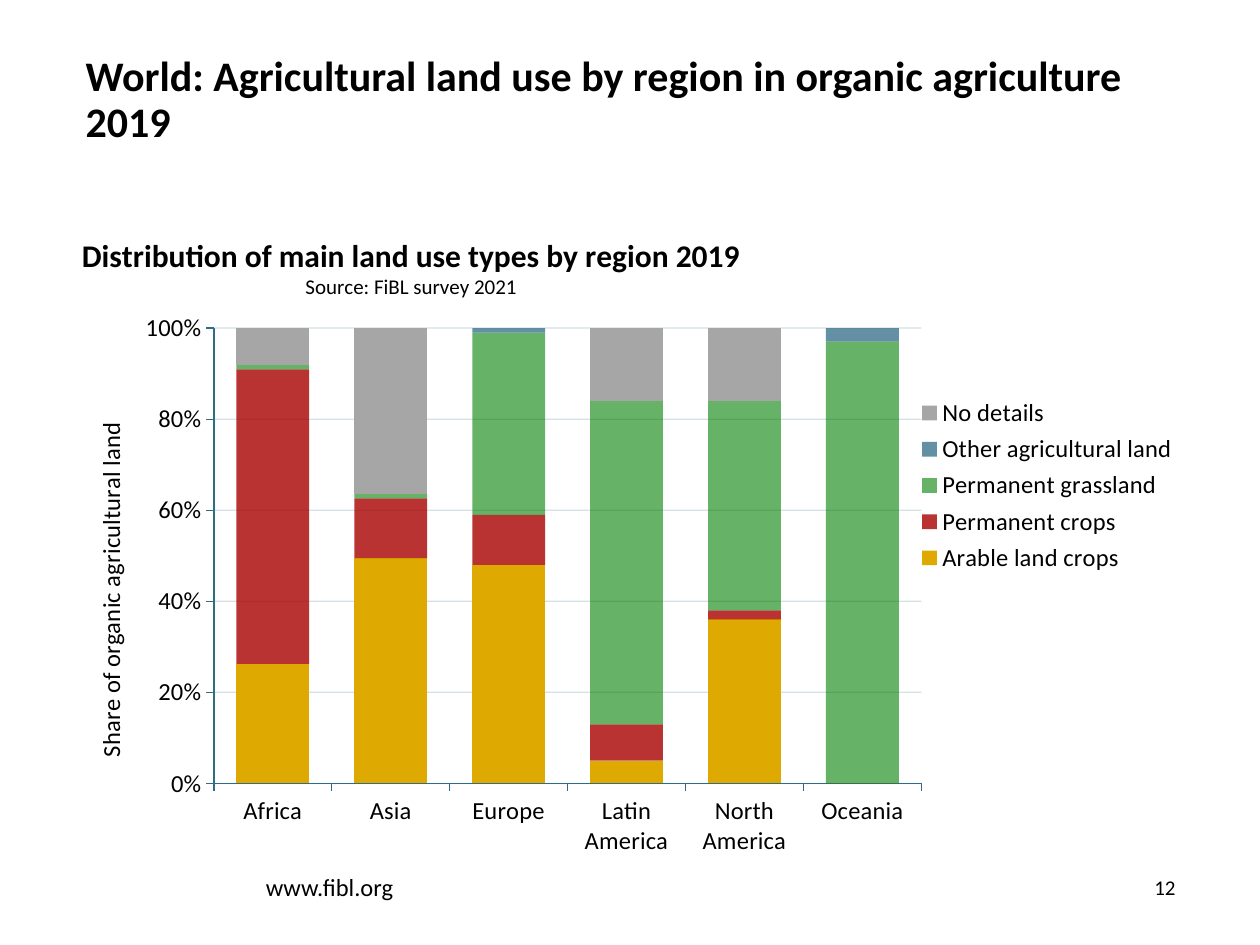
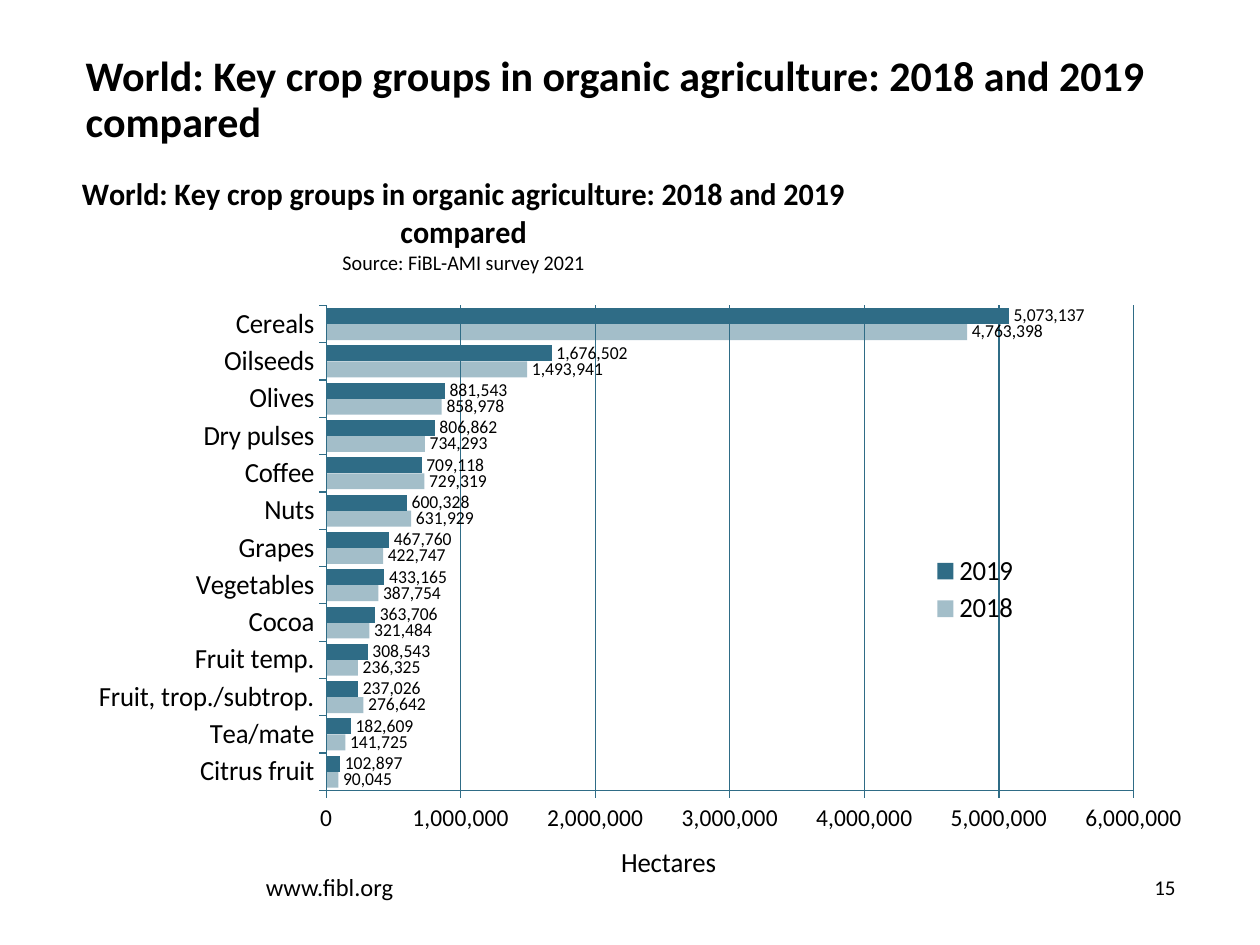
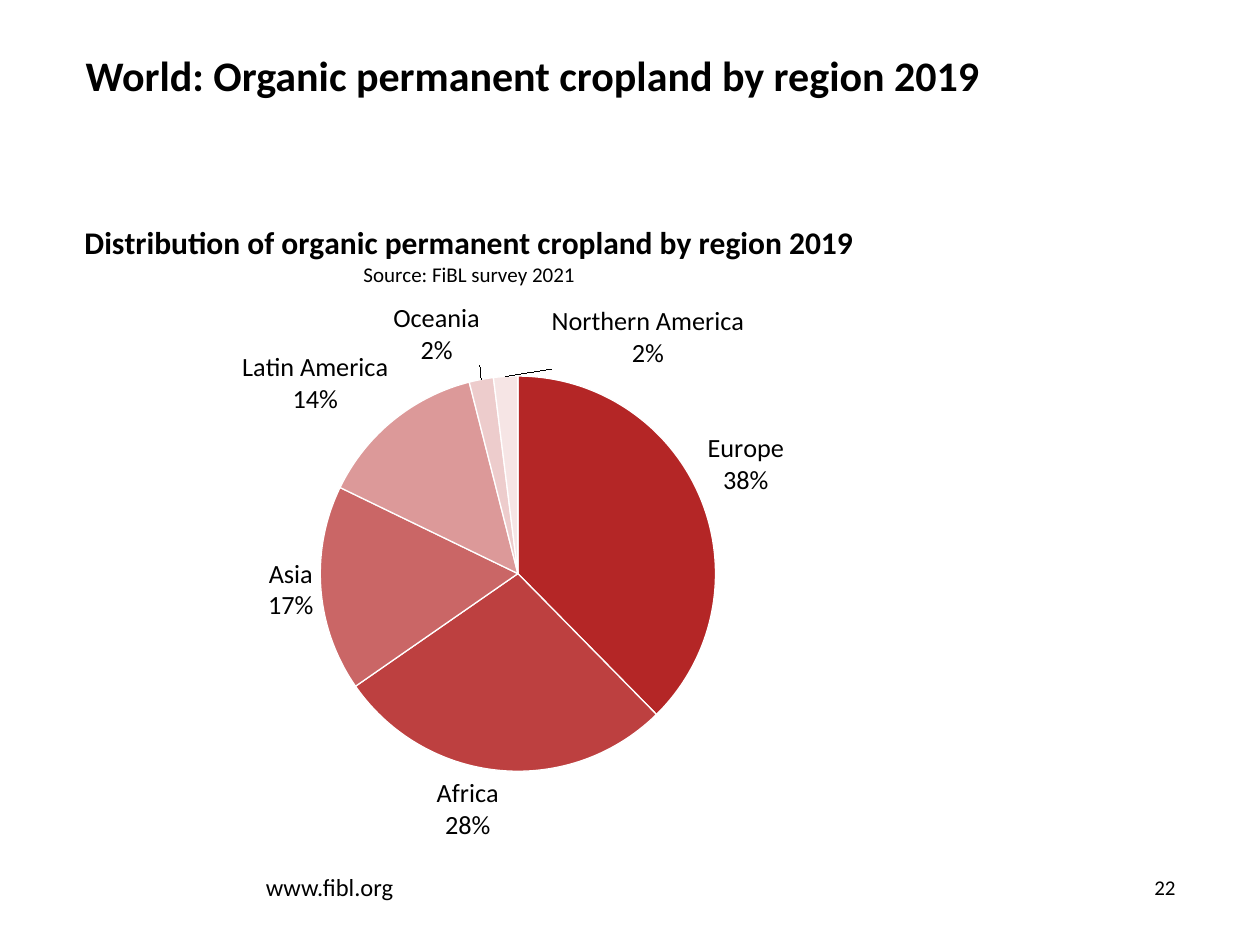
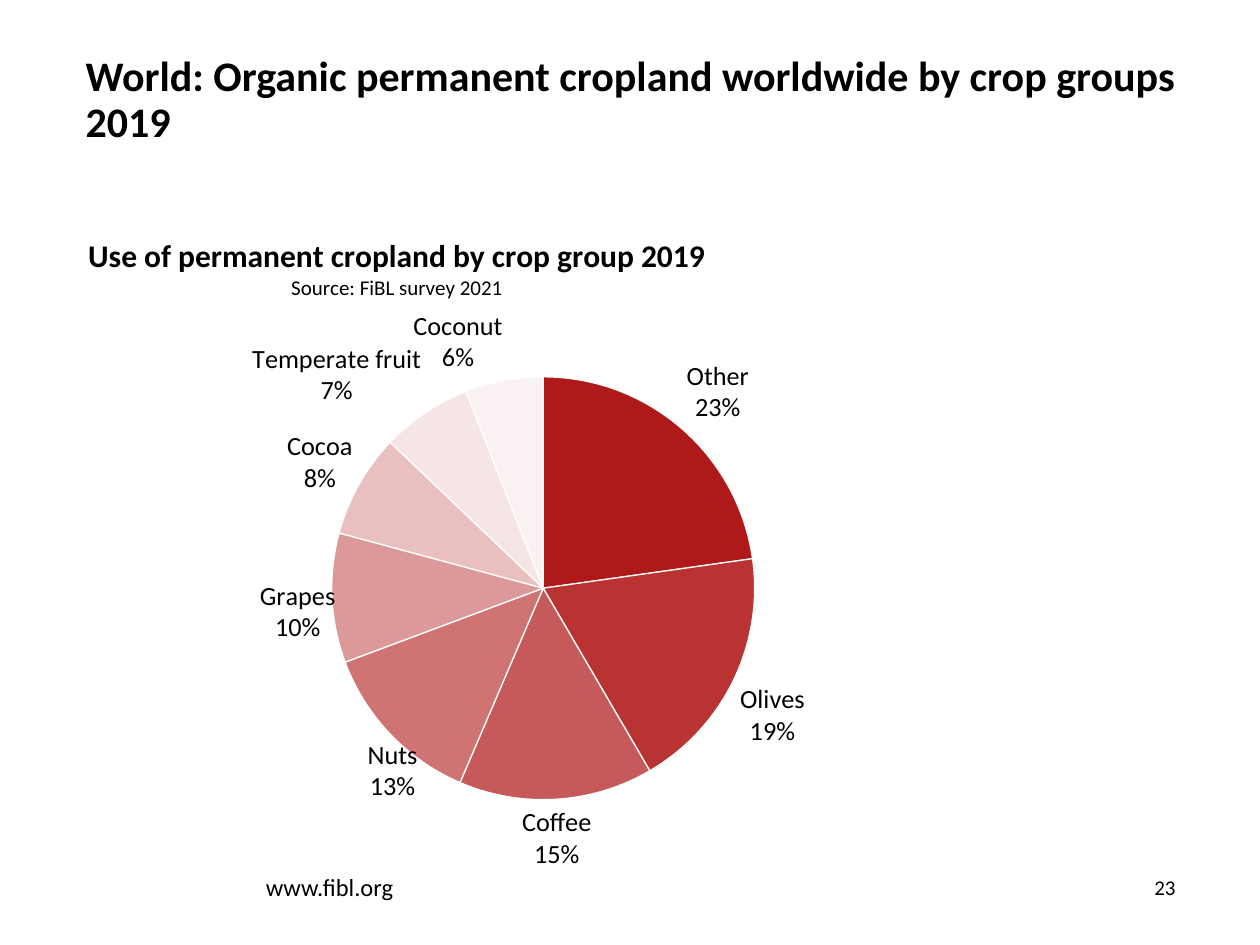
from copy import deepcopy

from lxml import etree
from pptx import Presentation
from pptx.chart.data import CategoryChartData
from pptx.dml.color import RGBColor
from pptx.enum.chart import XL_CHART_TYPE as ChartType
from pptx.enum.chart import XL_LABEL_POSITION as LabelPosition
from pptx.enum.chart import XL_LEGEND_POSITION as LegendPosition
from pptx.enum.chart import XL_TICK_MARK as TickMark
from pptx.enum.text import MSO_ANCHOR as Anchor
from pptx.enum.text import PP_ALIGN as Align
from pptx.oxml.ns import qn
from pptx.util import Inches, Pt

FONT = "Calibri"
BLACK = RGBColor(0x00, 0x00, 0x00)
WHITE = RGBColor(0xFF, 0xFF, 0xFF)
TEAL = RGBColor(0x2F, 0x6C, 0x86)
RED = RGBColor(0xA8, 0x00, 0x00)
GREEN = RGBColor(0x00, 0x80, 0x00)
GOLD = RGBColor(0xDE, 0xA9, 0x00)
GREY = RGBColor(0xA6, 0xA6, 0xA6)


def place(part, index, absolute, **spot):
    for old in part.findall(qn("c:layout")):
        part.remove(old)
    layout = etree.Element(qn("c:layout"))
    manual = etree.SubElement(layout, qn("c:manualLayout"))
    if part.tag == qn("c:plotArea"):
        etree.SubElement(manual, qn("c:layoutTarget"), val="inner")
    if absolute:
        for mode in ("xMode", "yMode"):
            etree.SubElement(manual, qn(f"c:{mode}"), val="edge")
    for name, share in spot.items():
        etree.SubElement(manual, qn(f"c:{name}"), val=str(share))
    part.insert(index, layout)


def fade(colors, opacities):
    for color, opacity in zip(colors, opacities):
        etree.SubElement(color, qn("a:alpha"), val=str(opacity * 1000))


pages = [
    {
        "number": "12",
        "title": "World: Agricultural land use by region in organic agriculture 2019",
        "heading": "Distribution of main land use types by region 2019",
        "source": "Source: FiBL survey 2021",
        "kind": ChartType.COLUMN_STACKED_100,
        "box": (0.62, 1.78, 8.76, 5.12),
        "plot": (0.123, 0.161, 0.641, 0.706),
        "categories": ["Africa", "Asia", "Europe", "Latin America", "North America", "Oceania"],
        "series": {
            "Arable land crops": [26, 49, 48, 5, 36, 0],
            "Permanent crops": [64, 13, 11, 8, 2, 0],
            "Permanent grassland": [1, 1, 40, 71, 46, 97],
            "Other agricultural land": [0, 0, 1, 0, None, 3],
            "No details": [8, 36, 0, 16, 16, 0],
        },
        "colors": [GOLD, RED, GREEN, TEAL, GREY],
        "opacities": [100, 80, 60, 75, 100],
        "gap": 62,
        "overlap": 100,
        "axis_title": "Share of organic agricultural land",
        "axis_title_at": {"x": 0.01, "y": 0.3},
        "value_format": "0%",
        "text_size": 14,
        "legend_at": {"x": 0.76, "y": 0.26, "w": 0.24, "h": 0.29},
    },
    {
        "number": "15",
        "title": "World: Key crop groups in organic agriculture: 2018 and 2019 compared",
        "heading": "World: Key crop groups in organic agriculture: 2018 and 2019 compared",
        "source": "Source: FiBL-AMI survey 2021",
        "kind": ChartType.BAR_CLUSTERED,
        "box": (0.62, 1.29, 8.76, 5.76),
        "plot": (0.252, 0.199, 0.765, 0.675),
        "categories": [
            "Citrus fruit", "Tea/mate", "Fruit, trop./subtrop.", "Fruit temp.", "Cocoa",
            "Vegetables", "Grapes", "Nuts", "Coffee", "Dry pulses", "Olives", "Oilseeds",
            "Cereals",
        ],
        "series": {
            "2018": [90045, 141725, 276642, 236325, 321484, 387754, 422747, 631929,
                     729319, 734293, 858978, 1493941, 4763398],
            "2019": [102897, 182609, 237026, 308543, 363706, 433165, 467760, 600328,
                     709118, 806862, 881543, 1676502, 5073137],
        },
        "colors": [TEAL, TEAL],
        "opacities": [44, 100],
        "gap": 34,
        "overlap": 0,
        "axis_title": "Hectares",
        "axis_title_at": {"x": 0.51, "y": 0.94},
        "value_format": "#,##0",
        "text_size": 16,
        "legend_at": {"x": 0.8, "y": 0.54, "w": 0.1, "h": 0.11},
    },
    {
        "number": "22",
        "title": "World: Organic permanent cropland by region 2019",
        "heading": "Distribution of organic permanent cropland by region 2019",
        "source": "Source: FiBL survey 2021",
        "kind": ChartType.PIE,
        "box": (0.64, 1.68, 8.72, 5.22),
        "plot": (0.202, 0.25, 0.392, 0.601),
        "categories": ["Europe", "Africa", "Asia", "Latin America", "Oceania", "Northern America"],
        "series": {"Series 1": [38, 28, 17, 14, 2, 2]},
        "opacities": [85, 75, 60, 40, 20, 10],
        "label_shifts": {4: (0, -0.01), 5: (0.13, 0)},
    },
    {
        "number": "23",
        "title": "World: Organic permanent cropland worldwide by crop groups 2019",
        "heading": "Use of permanent cropland by crop group 2019",
        "source": "Source: FiBL survey 2021",
        "kind": ChartType.PIE,
        "box": (0.67, 1.78, 8.66, 5.22),
        "plot": (0.216, 0.232, 0.409, 0.643),
        "categories": ["Other", "Olives", "Coffee", "Nuts", "Grapes", "Cocoa",
                       "Temperate fruit", "Coconut"],
        "series": {"Series 1": [23, 19, 15, 13, 10, 8, 7, 6]},
        "opacities": [90, 80, 65, 55, 40, 25, 10, 5],
        "label_shifts": {3: (0.03, 0), 4: (0.01, 0.02), 5: (0, 0.02)},
    },
]

deck = Presentation()
deck.slide_width, deck.slide_height = Inches(10), Inches(7.5)

for page in pages:
    slide = deck.slides.add_slide(deck.slide_layouts[6])

    texts = [
        ("www.fibl.org", (2.11, 6.86, 2.99, 0.34), 0.05, Anchor.BOTTOM,
         {"alignment": Align.LEFT}, {"size": Pt(14)}),
        (page["title"], (0.68, 0.44, 8.65, 0.69), 0, Anchor.TOP,
         {"line_spacing": 0.9}, {"size": Pt(24), "bold": True}),
        (page["number"], (8.47, 6.8, 0.86, 0.39), 0.05, Anchor.BOTTOM,
         {"alignment": Align.RIGHT}, {"size": Pt(12)}),
    ]
    for words, box, inset, anchor, paragraph_format, font_format in texts:
        frame = slide.shapes.add_textbox(*map(Inches, box)).text_frame
        frame_format = {
            "word_wrap": True, "vertical_anchor": anchor, "margin_left": 0, "margin_right": 0,
            "margin_top": Inches(inset), "margin_bottom": Inches(inset),
        }
        for name, value in frame_format.items():
            setattr(frame, name, value)
        paragraph = frame.paragraphs[0]
        for name, value in paragraph_format.items():
            setattr(paragraph, name, value)
        run = paragraph.add_run()
        run.text = words
        for name, value in {"name": FONT, **font_format}.items():
            setattr(run.font, name, value)
        run.font.color.rgb = BLACK

    figures = CategoryChartData(number_format="#,##0")
    figures.categories = page["categories"]
    for name, values in page["series"].items():
        figures.add_series(name, values)
    chart = slide.shapes.add_chart(page["kind"], *map(Inches, page["box"]), figures).chart
    chart.font.name = FONT
    chart.font.size = Pt(page.get("text_size", 18))
    chart.font.color.rgb = BLACK

    heading = chart.chart_title.text_frame
    heading.text = page["heading"] + "\n" + page["source"]
    for paragraph, size, bold in zip(heading.paragraphs, (18, 12), (True, False)):
        font = paragraph.runs[0].font
        for name, value in {"name": FONT, "size": Pt(size), "bold": bold}.items():
            setattr(font, name, value)
        font.color.rgb = BLACK
    root = chart.element
    place(root.xpath("c:chart/c:title")[0], 1, True, x=0, y=0.01)
    place(root.xpath(".//c:plotArea")[0], 0, True, **dict(zip("xywh", page["plot"])))

    plot = chart.plots[0]
    if page["kind"] == ChartType.PIE:
        chart.has_legend = False
        shares = plot.series[0]
        for index in range(len(page["categories"])):
            wedge = shares.points[index].format
            wedge.fill.solid()
            wedge.fill.fore_color.rgb = RED
            wedge.line.color.rgb = WHITE
            wedge.line.width = Pt(0.75)
        fade(root.xpath(".//c:dPt/c:spPr/a:solidFill/a:srgbClr"), page["opacities"])

        labels = shares.data_labels
        label_format = {
            "show_value": False, "show_category_name": True, "show_percentage": True,
            "number_format": "0%", "number_format_is_linked": False,
            "position": LabelPosition.OUTSIDE_END,
        }
        for name, value in label_format.items():
            setattr(labels, name, value)
        labels.font.name = FONT
        labels.font.size = Pt(15)
        labels.font.color.rgb = BLACK
        label_list = root.xpath(".//c:ser/c:dLbls")[0]
        separator = etree.Element(qn("c:separator"))
        separator.text = "\n"
        label_list.find(qn("c:showBubbleSize")).addnext(separator)
        shared = [part for part in label_list if part.tag != qn("c:showLeaderLines")]
        for order, (index, (x, y)) in enumerate(page["label_shifts"].items()):
            moved = etree.Element(qn("c:dLbl"))
            etree.SubElement(moved, qn("c:idx"), val=str(index))
            moved.extend(deepcopy(shared))
            place(moved, 1, False, x=x, y=y)
            label_list.insert(order, moved)
        continue

    plot.vary_by_categories = False
    plot.gap_width = page["gap"]
    plot.overlap = page["overlap"]
    for series, color in zip(plot.series, page["colors"]):
        series.format.fill.solid()
        series.format.fill.fore_color.rgb = color
        if page["kind"] == ChartType.BAR_CLUSTERED:
            labels = series.data_labels
            label_format = {
                "show_value": True, "number_format": "#,##0",
                "number_format_is_linked": False, "position": LabelPosition.OUTSIDE_END,
            }
            for name, value in label_format.items():
                setattr(labels, name, value)
            labels.font.name = FONT
            labels.font.size = Pt(10.5)
            labels.font.color.rgb = BLACK
    fade(root.xpath(".//c:ser/c:spPr/a:solidFill/a:srgbClr"), page["opacities"])

    value_axis = chart.value_axis
    value_axis.has_major_gridlines = True
    for axis, size in ((chart.category_axis, page["text_size"]), (value_axis, 14)):
        axis.major_tick_mark = TickMark.OUTSIDE
        axis.minor_tick_mark = TickMark.NONE
        axis.tick_labels.font.name = FONT
        axis.tick_labels.font.size = Pt(size)
        axis.tick_labels.font.color.rgb = BLACK
    for line in (chart.category_axis.format.line, value_axis.format.line,
                 value_axis.major_gridlines.format.line):
        line.color.rgb = TEAL
        line.width = Pt(0.75)
    value_axis.tick_labels.number_format = page["value_format"]
    value_axis.tick_labels.number_format_is_linked = False
    if page["kind"] == ChartType.COLUMN_STACKED_100:
        value_axis.minimum_scale = 0
        value_axis.major_unit = 0.2
        fade(root.xpath(".//c:majorGridlines//a:srgbClr"), [20])

    caption = value_axis.axis_title.text_frame
    caption.text = page["axis_title"]
    caption_font = caption.paragraphs[0].runs[0].font
    for name, value in {"name": FONT, "size": Pt(page["text_size"]), "bold": False}.items():
        setattr(caption_font, name, value)
    caption_font.color.rgb = BLACK
    place(root.xpath(".//c:valAx/c:title")[0], 1, True, **page["axis_title_at"])

    chart.has_legend = True
    legend = chart.legend
    legend.position = LegendPosition.RIGHT
    legend.include_in_layout = False
    legend.font.name = FONT
    legend.font.size = Pt(page["text_size"])
    legend.font.color.rgb = BLACK
    place(root.xpath(".//c:legend")[0], 1, True, **page["legend_at"])

deck.save("out.pptx")
